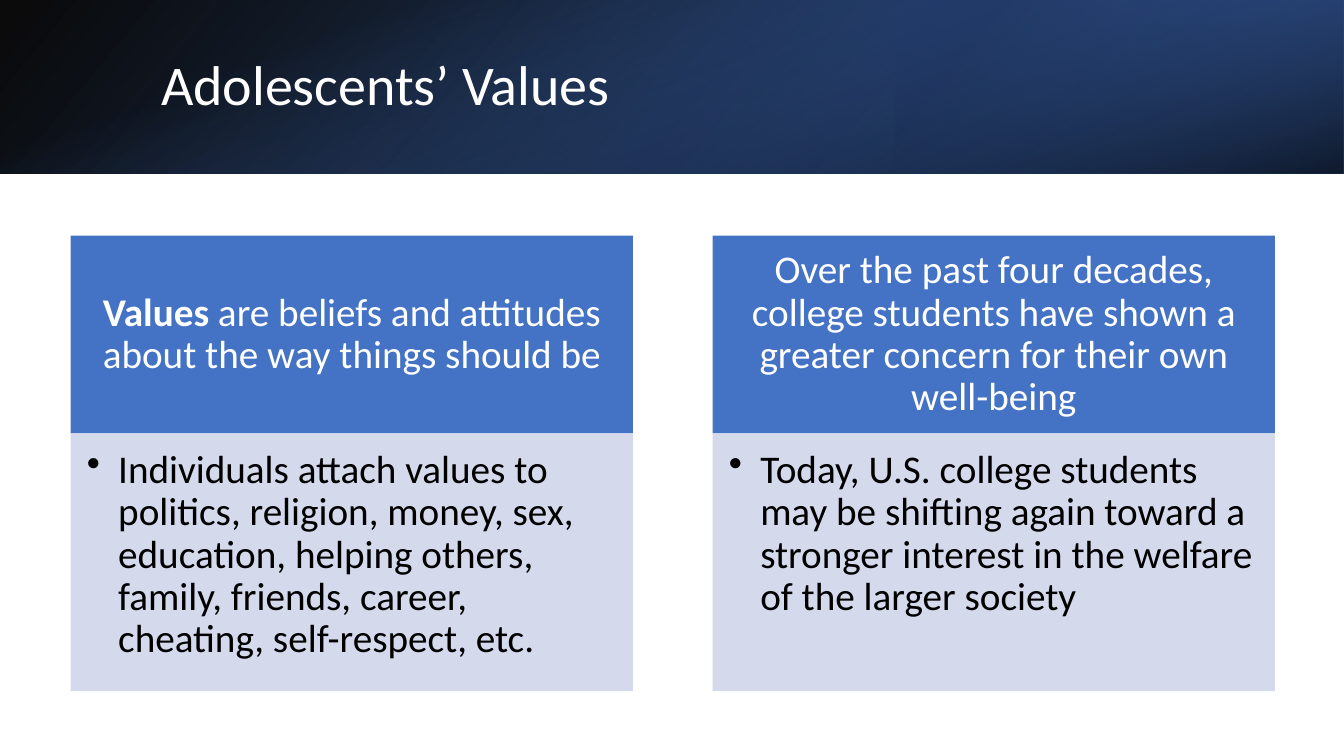
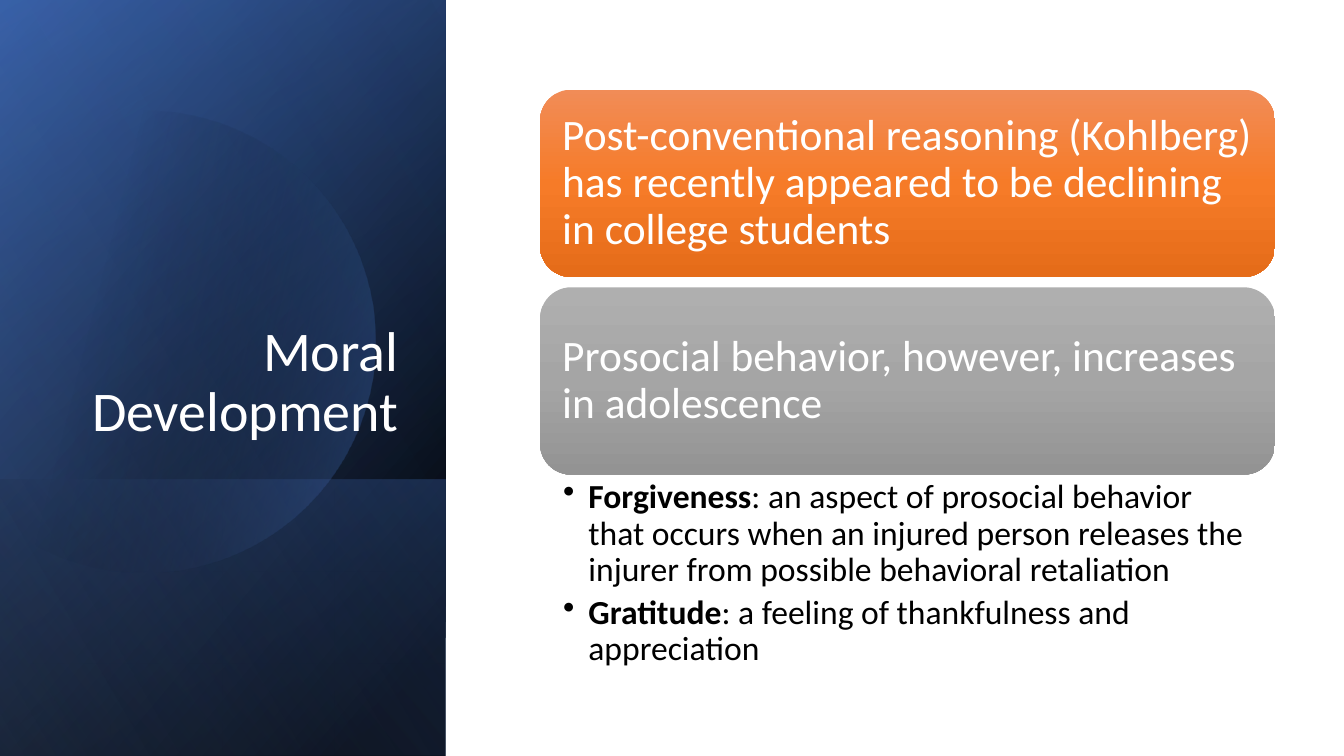
import math

from lxml import etree
from pptx import Presentation
from pptx.dml.color import RGBColor
from pptx.enum.shapes import MSO_SHAPE
from pptx.enum.text import MSO_ANCHOR, PP_ALIGN
from pptx.oxml.ns import qn
from pptx.util import Cm, Pt

RECTANGLE, ROUNDED = MSO_SHAPE.RECTANGLE, MSO_SHAPE.ROUNDED_RECTANGLE
TOP, MIDDLE, BOTTOM = MSO_ANCHOR.TOP, MSO_ANCHOR.MIDDLE, MSO_ANCHOR.BOTTOM
LEFT, CENTER, RIGHT = PP_ALIGN.LEFT, PP_ALIGN.CENTER, PP_ALIGN.RIGHT

FONT = "Calibri"
BLACK = RGBColor(0x00, 0x00, 0x00)
WHITE = RGBColor(0xFF, 0xFF, 0xFF)
BLUE = RGBColor(0x44, 0x72, 0xC4)
DEEP_BLUE = RGBColor(0x2F, 0x55, 0x97)
NAVY = RGBColor(0x20, 0x38, 0x64)
LIGHT_BLUE = RGBColor(0x8F, 0xAA, 0xDC)
PALE_BLUE = RGBColor(0xD4, 0xD9, 0xEC)
ORANGES = (RGBColor(0xF1, 0x8C, 0x57), RGBColor(0xF6, 0x7B, 0x28), RGBColor(0xE5, 0x6C, 0x19))
GRAYS = (RGBColor(0xAF, 0xAF, 0xAF), RGBColor(0xA5, 0xA5, 0xA5), RGBColor(0x93, 0x93, 0x93))

# Lengths in centimetres
SLIDE_WIDTH, SLIDE_HEIGHT = 33.87, 19.05
BAND_HEIGHT = 4.37
SIDE_WIDTH = 11.23


# Fills: each gradient stop is (position %, colour, opacity %)
def fill_gradient(shape, stops, angle):
    shape.fill.background()
    gradient = etree.Element(qn("a:gradFill"), rotWithShape="1")
    stop_list = etree.SubElement(gradient, qn("a:gsLst"))
    for position, color, opacity in stops:
        stop = etree.SubElement(stop_list, qn("a:gs"), pos=str(position * 1000))
        color_node = etree.SubElement(stop, qn("a:srgbClr"), val=str(color))
        etree.SubElement(color_node, qn("a:alpha"), val=str(opacity * 1000))
    etree.SubElement(gradient, qn("a:lin"), ang=str(angle * 60000), scaled="0")
    properties = shape._element.spPr
    properties.replace(properties.find(qn("a:noFill")), gradient)


def add_box(slide, kind, left, top, width, height, color=None):
    shape = slide.shapes.add_shape(kind, Cm(left), Cm(top), Cm(width), Cm(height))
    shape.shadow.inherit = False
    shape.line.fill.background()
    if color is not None:
        shape.fill.solid()
        shape.fill.fore_color.rgb = color
    return shape


def add_panel(slide, left, top, width, height, stops, angle, rotation=0, flip=True):
    """Gradient rectangle covering the given area, whatever its rotation."""
    if rotation == 90:
        left, top = left + (width - height) / 2, top + (height - width) / 2
        width, height = height, width
    panel = add_box(slide, RECTANGLE, left, top, width, height)
    panel.rotation = rotation
    if flip:
        panel._element.spPr.xfrm.set("flipH", "1")
    fill_gradient(panel, stops, angle)


def add_cut_circle(slide, center_x, center_y, radius, stops, angle):
    """Circle cut off by the left edge of the slide."""
    half_turn = math.degrees(math.acos(-center_x / radius))
    steps = 120
    points = []
    for step in range(steps + 1):
        turn = math.radians(half_turn * (2 * step / steps - 1))
        points.append((Cm(center_x + radius * math.cos(turn)),
                       Cm(center_y + radius * math.sin(turn))))
    builder = slide.shapes.build_freeform(*points[0])
    builder.add_line_segments(points[1:], close=True)
    circle = builder.convert_to_shape()
    circle.shadow.inherit = False
    circle.line.fill.background()
    fill_gradient(circle, stops, angle)


# Text: each paragraph is a list of (text, bold) runs
def write_text(shape, paragraphs, *, size, color=WHITE, align=LEFT, anchor=MIDDLE,
               insets=(0.25, 0.13, 0.25, 0.13), bullet_indent=None, space_after=0):
    frame = shape.text_frame
    frame.word_wrap = True
    frame.vertical_anchor = anchor
    (frame.margin_left, frame.margin_top,
     frame.margin_right, frame.margin_bottom) = map(Cm, insets)
    for index, runs in enumerate(paragraphs):
        paragraph = frame.add_paragraph() if index else frame.paragraphs[0]
        paragraph.alignment = align
        paragraph.line_spacing = 0.9
        paragraph.space_after = Pt(space_after)
        if bullet_indent:
            properties = paragraph._p.get_or_add_pPr()
            properties.set("marL", str(Cm(bullet_indent)))
            properties.set("indent", str(-Cm(bullet_indent)))
            etree.SubElement(properties, qn("a:buChar"), char="•")
        for text, bold in runs:
            run = paragraph.add_run()
            run.text = text
            run.font.name = FONT
            run.font.size = Pt(size)
            run.font.bold = bold
            run.font.color.rgb = color


def add_text(slide, left, top, width, height, paragraphs, **text_format):
    box = slide.shapes.add_textbox(Cm(left), Cm(top), Cm(width), Cm(height))
    write_text(box, paragraphs, **text_format)


def add_title(slide, left, top, width, height, title, **text_format):
    add_text(slide, left, top, width, height, [[(title, False)]], size=40, **text_format)


def add_column(slide, left, heading, detail):
    """Blue heading box with a pale bullet box under it."""
    top, width, heading_height, detail_height = 5.94, 14.17, 4.98, 6.5
    box = add_box(slide, RECTANGLE, left, top, width, heading_height, BLUE)
    write_text(box, [heading], size=28, align=CENTER, insets=(0.56, 0.3, 0.56, 0.3))
    box = add_box(slide, RECTANGLE, left, top + heading_height, width, detail_height, PALE_BLUE)
    write_text(box, [[(detail, False)]], size=28, color=BLACK, anchor=TOP,
               insets=(0.41, 0.41, 0.56, 0.61), bullet_indent=0.79)


def build_values_slide(slide):
    # Title band
    add_panel(slide, 0, 0, SLIDE_WIDTH, BAND_HEIGHT,
              [(0, BLACK, 96), (100, DEEP_BLUE, 100)], 140)
    third = SLIDE_WIDTH / 3
    add_panel(slide, 2 * third, 0, third, BAND_HEIGHT,
              [(19, NAVY, 68), (100, BLUE, 79)], 320, rotation=180)
    add_panel(slide, 0, 0, SLIDE_WIDTH, BAND_HEIGHT,
              [(23, BLUE, 0), (99, BLACK, 74)], 340, rotation=90, flip=False)
    add_title(slide, 3.81, 0.97, 27.89, 2.44, "Adolescents’ Values")

    # Two columns
    columns = [
        ([("Values", True), (" are beliefs and attitudes about the way things should be", False)],
         "Individuals attach values to politics, religion, money, sex, education, "
         "helping others, family, friends, career, cheating, self-respect, etc."),
        ([("Over the past four decades, college students have shown a greater concern "
           "for their own well-being", False)],
         "Today, U.S. college students may be shifting again toward a stronger interest "
         "in the welfare of the larger society"),
    ]
    for index, (heading, detail) in enumerate(columns):
        add_column(slide, 1.78 + index * 16.18, heading, detail)


def build_moral_slide(slide):
    # Side panel
    side = (0, 0, SIDE_WIDTH, SLIDE_HEIGHT)
    add_panel(slide, *side, [(8, BLACK, 100), (100, DEEP_BLUE, 100)], 50, rotation=90)
    add_panel(slide, *side, [(0, BLACK, 0), (99, BLUE, 46)], 30, rotation=90)
    add_panel(slide, 0, 12.09, SIDE_WIDTH, SLIDE_HEIGHT - 12.09,
              [(2, BLUE, 29), (100, BLACK, 30)], 130, rotation=90)
    add_cut_circle(slide, 3.65, 8.6, 5.82, [(29, BLACK, 0), (100, BLUE, 43)], 14)
    add_panel(slide, *side, [(0, BLACK, 0), (99, LIGHT_BLUE, 11)], 120, rotation=90)
    add_title(slide, 1.63, 4.67, 8.66, 6.65, "Moral Development", align=RIGHT, anchor=BOTTOM)

    # Rounded statements
    left, width = 13.61, 18.52
    statements = [
        ("Post-conventional reasoning (Kohlberg) has recently appeared to be declining "
         "in college students", ORANGES),
        ("Prosocial behavior, however, increases in adolescence", GRAYS),
    ]
    for index, (statement, colors) in enumerate(statements):
        card = add_box(slide, ROUNDED, left, 2.26 + index * 4.98, width, 4.72)
        fill_gradient(card, [(50 * step, color, 100) for step, color in enumerate(colors)], 90)
        write_text(card, [[(statement, False)]], size=31, insets=(0.33,) * 4)

    # Definitions
    definitions = [
        ("Forgiveness", ": an aspect of prosocial behavior that occurs when an injured person "
                        "releases the injurer from possible behavioral retaliation"),
        ("Gratitude", ": a feeling of thankfulness and appreciation"),
    ]
    add_text(slide, left, 11.99, width, 5.08,
             [[(term, True), (meaning, False)] for term, meaning in definitions],
             size=24, color=BLACK, anchor=TOP, insets=(0.58, 0.1, 0.61, 0.1),
             bullet_indent=0.64, space_after=5)


def main():
    presentation = Presentation()
    presentation.slide_width, presentation.slide_height = Cm(SLIDE_WIDTH), Cm(SLIDE_HEIGHT)
    blank_layout = presentation.slide_layouts[6]
    for build_slide in (build_values_slide, build_moral_slide):
        build_slide(presentation.slides.add_slide(blank_layout))
    presentation.save("out.pptx")


if __name__ == "__main__":
    main()
